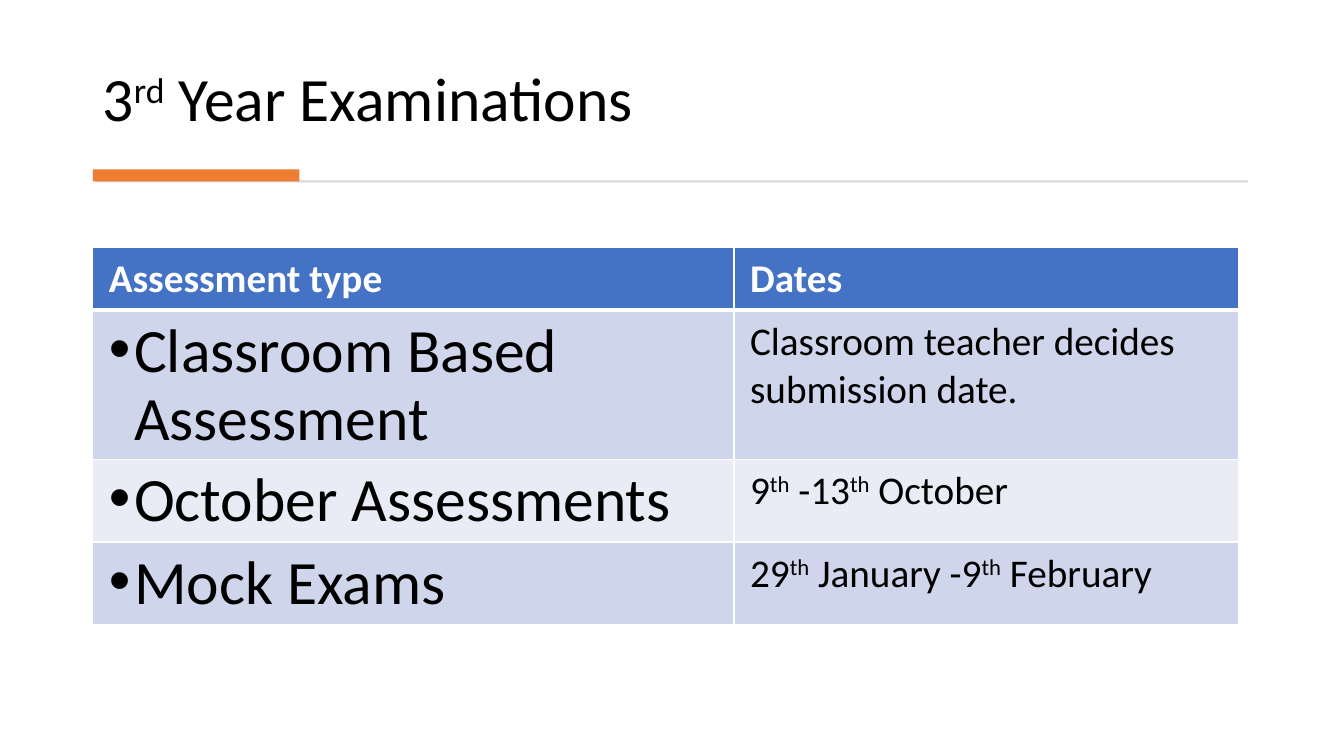
import dataclasses

import pptx
import pptx.dml.color
import pptx.enum.shapes
import pptx.enum.text
import pptx.oxml.ns
import pptx.util
from lxml import etree
from pptx.util import Inches


@dataclasses.dataclass(frozen=True)
class Theme:
    font: str = "Calibri"
    large: int = 44
    normal: int = 28
    text: str = "000000"
    white: str = "FFFFFF"
    rule: str = "D5D5D5"
    accent: str = "ED7D31"
    header: str = "4472C4"
    bands: tuple = ("CFD5EA", "E9EBF5")


THEME = Theme()
COLUMN_WIDTHS = (6.36, 5)
ROW_HEIGHTS = (0.59, 1.28, 0.71, 0.71)

# Text between carets is superscript
TITLE = "3^rd^ Year Examinations"
ROWS = (
    ("Assessment type", "Dates"),
    ("Classroom Based Assessment", "Classroom teacher decides submission date."),
    ("October Assessments", "9^th^ -13^th^ October"),
    ("Mock Exams", "29^th^ January -9^th^ February"),
)


def rgb(color):
    return pptx.dml.color.RGBColor.from_string(color)


def write_text(paragraph, text, size, color=THEME.text, bold=False):
    for index, part in enumerate(text.split("^")):
        run = paragraph.add_run()
        run.text = part
        run.font.name = THEME.font
        run.font.size = pptx.util.Pt(size)
        run.font.bold = bold
        run.font.color.rgb = rgb(color)
        if index % 2:
            run._r.get_or_add_rPr().set("baseline", "30000")


def add_bullet(paragraph):
    properties = paragraph._p.get_or_add_pPr()
    properties.set("marL", str(Inches(0.25)))
    properties.set("indent", str(-Inches(0.25)))
    font = etree.SubElement(properties, pptx.oxml.ns.qn("a:buFont"))
    font.set("typeface", "Arial")
    bullet = etree.SubElement(properties, pptx.oxml.ns.qn("a:buChar"))
    bullet.set("char", "•")
    paragraph.line_spacing = 0.9


def add_title(slide, text):
    box = slide.shapes.add_textbox(Inches(0.92), Inches(0.28), Inches(11.49), Inches(1.11))
    frame = box.text_frame
    frame.word_wrap = True
    frame.vertical_anchor = pptx.enum.text.MSO_ANCHOR.BOTTOM
    paragraph = frame.paragraphs[0]
    paragraph.line_spacing = 0.9
    write_text(paragraph, text, THEME.large)


def add_bar(slide, left, top, width, height, color):
    shape = slide.shapes.add_shape(
        pptx.enum.shapes.MSO_SHAPE.RECTANGLE,
        Inches(left), Inches(top), Inches(width), Inches(height))
    shape.shadow.inherit = False
    shape.fill.solid()
    shape.fill.fore_color.rgb = rgb(color)
    shape.line.fill.background()


def set_borders(cell, bottom_width):
    properties = cell._tc.get_or_add_tcPr()
    for side, width in (("L", 1), ("R", 1), ("T", 1), ("B", bottom_width)):
        line = etree.SubElement(properties, pptx.oxml.ns.qn(f"a:ln{side}"))
        line.set("w", str(pptx.util.Pt(width)))
        fill = etree.SubElement(line, pptx.oxml.ns.qn("a:solidFill"))
        etree.SubElement(fill, pptx.oxml.ns.qn("a:srgbClr")).set("val", THEME.white)


def style_cell(cell, fill, bottom_width):
    cell.margin_left = cell.margin_right = Inches(0.16)
    cell.margin_top = cell.margin_bottom = Inches(0.08)
    set_borders(cell, bottom_width)
    cell.fill.solid()
    cell.fill.fore_color.rgb = rgb(fill)


def add_assessment_table(slide):
    table = slide.shapes.add_table(
        len(ROWS), len(COLUMN_WIDTHS), Inches(0.92), Inches(2.45),
        Inches(sum(COLUMN_WIDTHS)), Inches(sum(ROW_HEIGHTS))).table
    for column, width in zip(table.columns, COLUMN_WIDTHS):
        column.width = Inches(width)
    for row, height in zip(table.rows, ROW_HEIGHTS):
        row.height = Inches(height)

    for row_index, texts in enumerate(ROWS):
        is_header = row_index == 0
        fill = THEME.header if is_header else THEME.bands[(row_index - 1) % 2]
        for column_index, text in enumerate(texts):
            cell = table.cell(row_index, column_index)
            style_cell(cell, fill, 3 if is_header else 1)
            paragraph = cell.text_frame.paragraphs[0]
            if is_header:
                write_text(paragraph, text, THEME.normal, THEME.white, bold=True)
            elif column_index == 0:
                add_bullet(paragraph)
                write_text(paragraph, text, THEME.large)
            else:
                write_text(paragraph, text, THEME.normal)


def main():
    presentation = pptx.Presentation()
    presentation.slide_width = Inches(13.33)
    presentation.slide_height = Inches(7.5)
    slide = presentation.slides.add_slide(presentation.slide_layouts[6])

    # Title with its rule and accent bar
    add_title(slide, TITLE)
    add_bar(slide, 0.95, 1.79, 11.43, 0.02, THEME.rule)
    add_bar(slide, 0.92, 1.68, 2.05, 0.12, THEME.accent)

    # Examination dates
    add_assessment_table(slide)

    presentation.save("out.pptx")


if __name__ == "__main__":
    main()
